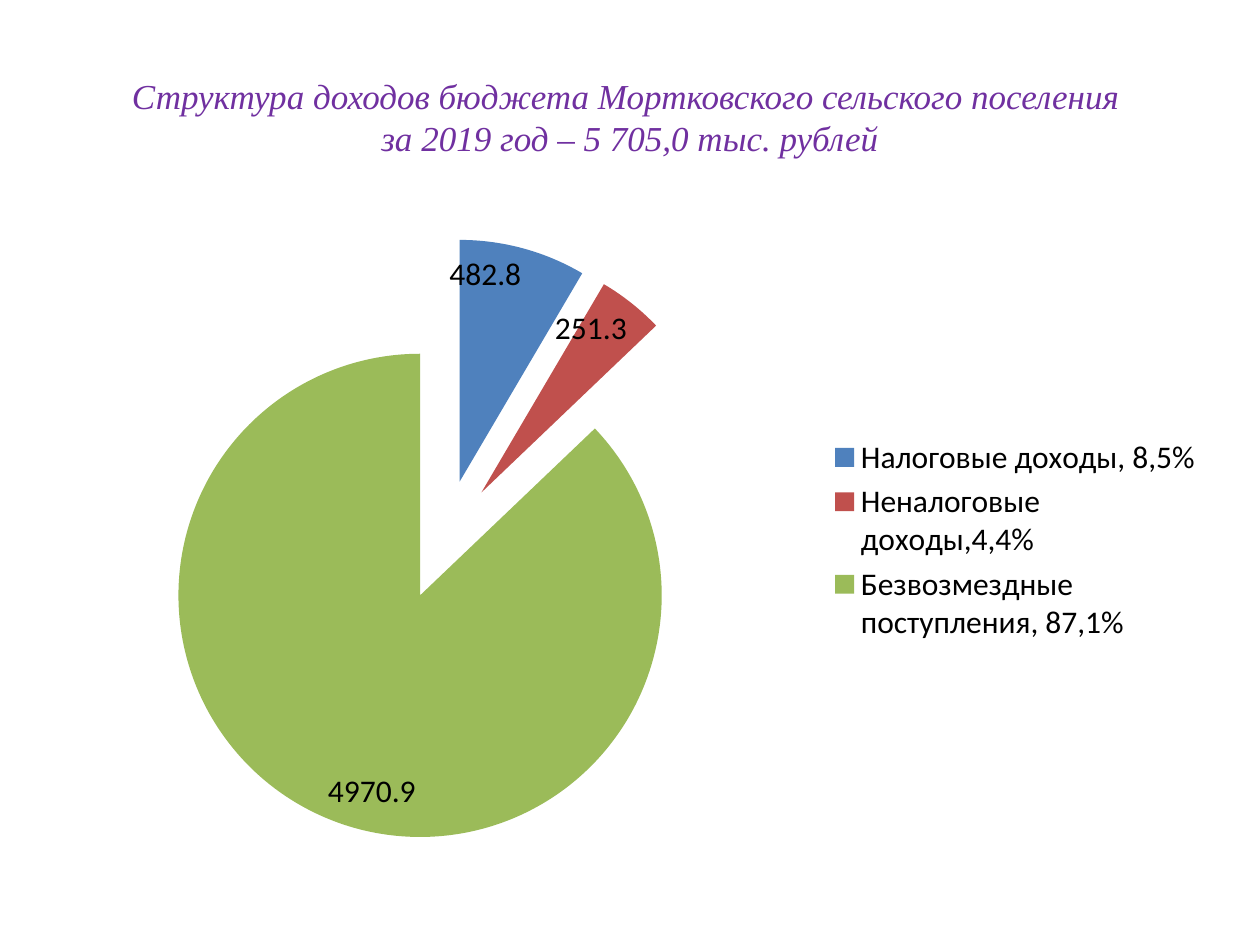
import pptx
import pptx.chart.data
import pptx.dml.color
import pptx.enum.chart
import pptx.enum.text
import pptx.oxml
import pptx.oxml.ns
import pptx.util
from pptx.util import Inches

RGBColor = pptx.dml.color.RGBColor
PURPLE = RGBColor(0x70, 0x30, 0xA0)
BLACK = RGBColor(0x00, 0x00, 0x00)
BLUE = RGBColor(0x4F, 0x81, 0xBD)
RED = RGBColor(0xC0, 0x50, 0x4D)
GREEN = RGBColor(0x9B, 0xBB, 0x59)

HEADING = "Структура доходов бюджета Мортковского сельского поселения \vза 2019 год – 5 705,0 тыс. рублей"
INCOME = [
    ("Налоговые доходы, 8,5%", 482.8, BLUE),
    ("Неналоговые доходы,4,4%", 251.3, RED),
    ("Безвозмездные поступления, 87,1%", 4970.9, GREEN),
]
EXPLOSION = 25


def apply_format(target, values):
    for attribute, value in values.items():
        setattr(target, attribute, value)


def format_font(font, color, values):
    apply_format(font, values)
    font.color.rgb = color


def set_heading(slide):
    heading = slide.shapes.title
    apply_format(heading, {
        "left": Inches(0.5), "top": Inches(0.3),
        "width": Inches(9), "height": Inches(1.25),
    })
    heading.text_frame.text = HEADING
    heading.text_frame.vertical_anchor = pptx.enum.text.MSO_ANCHOR.MIDDLE
    paragraph = heading.text_frame.paragraphs[0]
    paragraph.alignment = pptx.enum.text.PP_ALIGN.CENTER
    for line in paragraph.runs:
        format_font(line.font, PURPLE, {
            "name": "Times New Roman", "size": pptx.util.Pt(20), "italic": True,
        })


def explode(series, percent):
    explosion = pptx.oxml.parse_xml(
        f'<c:explosion {pptx.oxml.ns.nsdecls("c")} val="{percent}"/>'
    )
    series._element.find(pptx.oxml.ns.qn("c:tx")).addnext(explosion)


def add_income_pie(slide):
    income_data = pptx.chart.data.CategoryChartData(number_format="0.0")
    income_data.categories = [name for name, _, _ in INCOME]
    income_data.add_series("Series 1", [amount for _, amount, _ in INCOME])
    pie = slide.shapes.add_chart(
        pptx.enum.chart.XL_CHART_TYPE.PIE,
        Inches(0.5), Inches(1.75), Inches(9.15), Inches(5.07), income_data,
    ).chart
    apply_format(pie, {"has_title": False, "has_legend": True})
    format_font(pie.font, BLACK, {"name": "Calibri", "size": pptx.util.Pt(18)})
    apply_format(pie.legend, {
        "position": pptx.enum.chart.XL_LEGEND_POSITION.RIGHT,
        "include_in_layout": False,
    })

    plot = pie.plots[0]
    apply_format(plot, {"vary_by_categories": True, "has_data_labels": True})
    apply_format(plot.data_labels, {
        "show_value": True,
        "show_percentage": False,
        "number_format": "0.0",
        "number_format_is_linked": False,
        "position": pptx.enum.chart.XL_LABEL_POSITION.INSIDE_END,
    })

    series = plot.series[0]
    explode(series, EXPLOSION)
    for index, (_, _, color) in enumerate(INCOME):
        fill = series.points[index].format.fill
        fill.solid()
        fill.fore_color.rgb = color


def main():
    deck = pptx.Presentation()
    apply_format(deck, {"slide_width": Inches(10), "slide_height": Inches(7.5)})
    slide = deck.slides.add_slide(deck.slide_layouts.get_by_name("Title Only"))
    set_heading(slide)
    add_income_pie(slide)
    deck.save("out.pptx")


if __name__ == "__main__":
    main()
